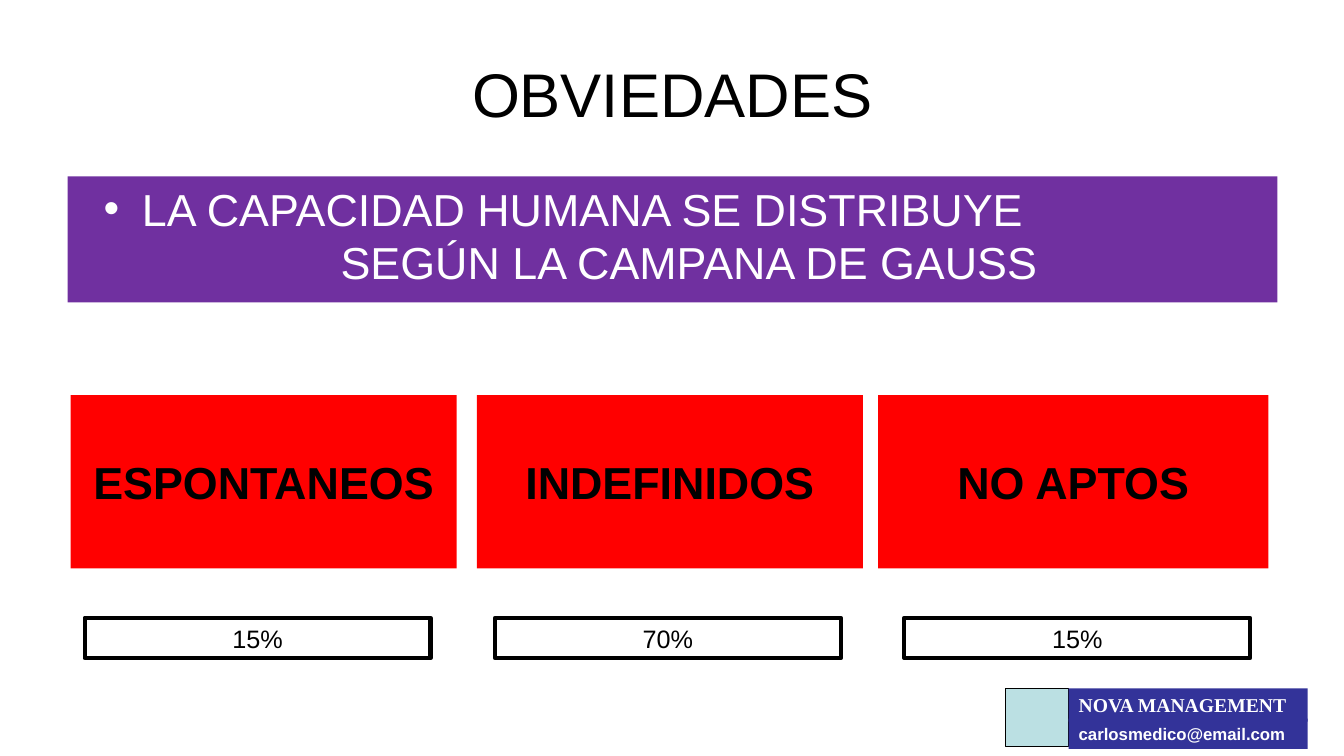
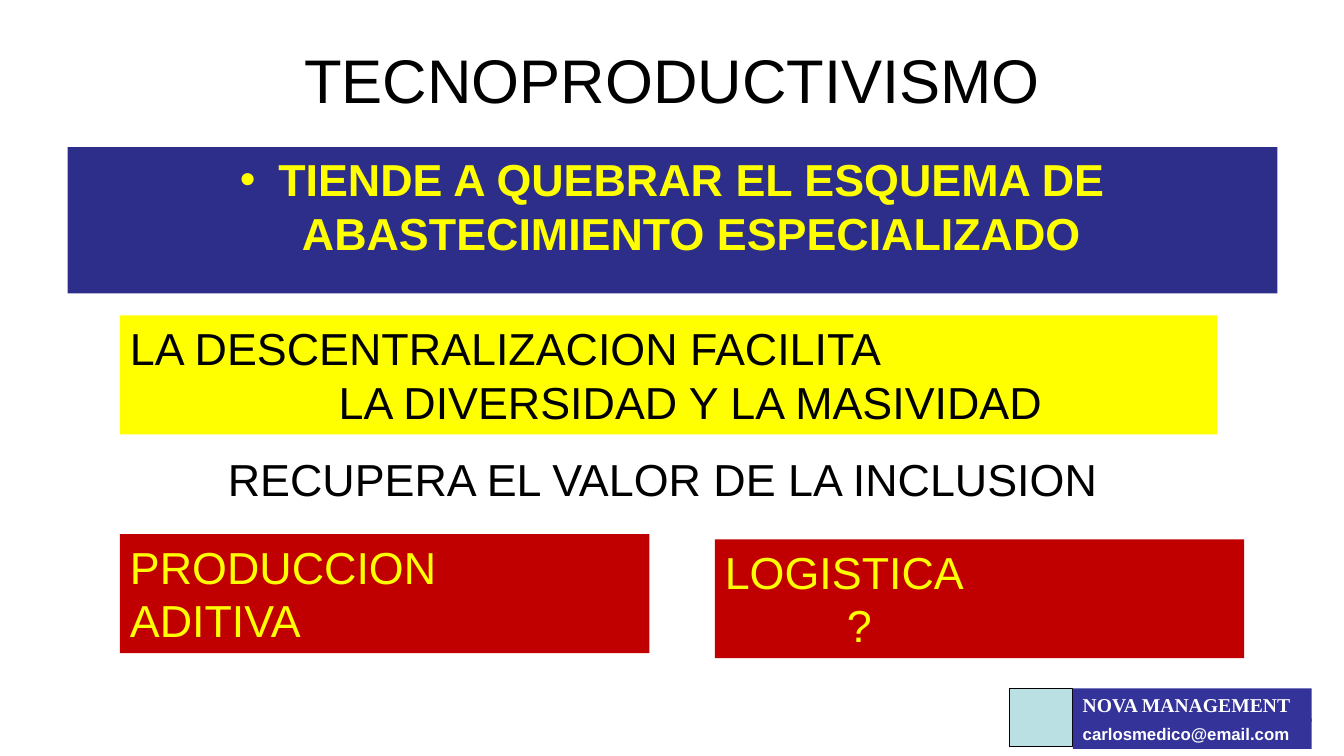
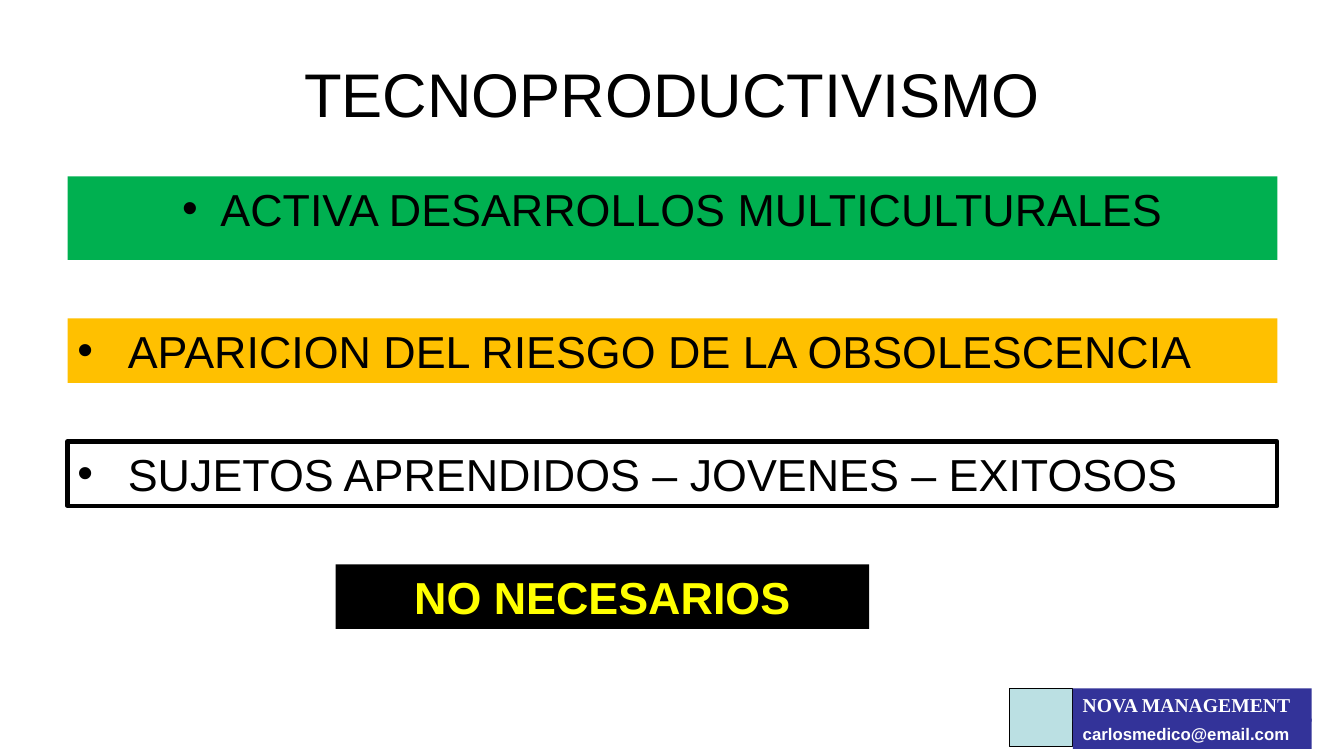
from lxml.etree import SubElement
from pptx import Presentation
from pptx.dml.color import RGBColor
from pptx.enum.shapes import MSO_SHAPE
from pptx.enum.text import MSO_ANCHOR, MSO_AUTO_SIZE, PP_ALIGN
from pptx.oxml.ns import qn
from pptx.util import Inches, Pt

BLACK = RGBColor(0x00, 0x00, 0x00)
WHITE = RGBColor(0xFF, 0xFF, 0xFF)
PURPLE = RGBColor(0x70, 0x30, 0xA0)
RED = RGBColor(0xFF, 0x00, 0x00)
NAVY = RGBColor(0x2D, 0x2D, 0x8A)
YELLOW = RGBColor(0xFF, 0xFF, 0x00)
WINE = RGBColor(0xC0, 0x00, 0x00)
GREEN = RGBColor(0x00, 0xB0, 0x50)
AMBER = RGBColor(0xFF, 0xC0, 0x00)
INDIGO = RGBColor(0x33, 0x33, 0x99)
AQUA = RGBColor(0xBB, 0xE0, 0xE3)

LEFT = 0.67
WIDE = 12
CENTER = PP_ALIGN.CENTER


def style(para, color, size, bold=False, face="Arial"):
    font = para.font
    font.name, font.size, font.bold = face, Pt(size), bold
    font.color.rgb = color


def indent(para, left, hang=0):
    props = para._p.get_or_add_pPr()
    props.set("marL", str(Inches(left)))
    props.set("indent", str(-Inches(hang)))
    if hang:
        SubElement(props, qn("a:buFont"), typeface="Arial")
        SubElement(props, qn("a:buChar"), char="•")


def panel(shapes, box, fill=None, edge=0):
    shape = shapes.add_shape(MSO_SHAPE.RECTANGLE, *map(Inches, box))
    shape.shadow.inherit = False
    if fill is None:
        shape.fill.background()
    else:
        shape.fill.solid()
        shape.fill.fore_color.rgb = fill
    if edge:
        shape.line.color.rgb = BLACK
        shape.line.width = Pt(edge)
    else:
        shape.line.fill.background()
    return shape


def write(shape, lines, color=BLACK, size=32, align=PP_ALIGN.LEFT,
          bold=False, face="Arial", anchor=MSO_ANCHOR.TOP):
    frame = shape.text_frame
    frame.word_wrap = True
    frame.auto_size = MSO_AUTO_SIZE.NONE
    frame.vertical_anchor = anchor
    frame.text = "\n".join(lines)
    for para in frame.paragraphs:
        para.alignment = align
        style(para, color, size, bold, face)
    return frame.paragraphs


def footer(slide, left, top=6.83):
    shapes = slide.shapes.add_group_shape().shapes
    panel(shapes, (left, top, 0.63, 0.58), AQUA, 0.75)
    rows = (
        (0, 0.33, "NOVA MANAGEMENT", 14, "Times New Roman"),
        (0.3, 0.3, "carlosmedico@email.com", 12, "Arial"),
    )
    for drop, high, text, size, face in rows:
        label = panel(shapes, (left + 0.63, top + drop, 2.37, high), INDIGO)
        write(label, [text], WHITE, size, bold=True, face=face)


def start(deck, text, high=1.25, mark=10.01):
    slide = deck.slides.add_slide(deck.slide_layouts[5])
    title = slide.shapes.title
    title.left, title.top, title.width, title.height = map(
        Inches, (LEFT, 0.3, WIDE, high))
    write(title, [text], size=44, align=CENTER, anchor=MSO_ANCHOR.MIDDLE)
    footer(slide, mark)
    return slide.shapes


def column(shapes, left, wide, name, share, inset):
    card = panel(shapes, (left, 3.92, wide, 1.72), RED)
    write(card, [name], align=CENTER, bold=True, anchor=MSO_ANCHOR.MIDDLE)
    rate = panel(shapes, (left + inset, 6.13, 3.43, 0.4), edge=3)
    write(rate, [share], size=18, align=CENTER, anchor=MSO_ANCHOR.MIDDLE)


def truths(deck):
    shapes = start(deck, "OBVIEDADES", mark=9.97)
    band = panel(shapes, (LEFT, 1.75, WIDE, 1.25), PURPLE)
    first, second = write(
        band,
        ["LA CAPACIDAD HUMANA SE DISTRIBUYE", "SEGÚN LA CAMPANA DE GAUSS"],
        WHITE)
    indent(first, 0.64, 0.38)
    indent(second, 2.61)
    for item in (
        (0.7, 3.83, "ESPONTANEOS", "15%", 0.14),
        (4.73, 3.83, "INDEFINIDOS", "70%", 0.18),
        (8.71, 3.87, "NO APTOS", "15%", 0.26),
    ):
        column(shapes, *item)


def supply(deck):
    shapes = start(deck, "TECNOPRODUCTIVISMO", 0.96)
    band = panel(shapes, (LEFT, 1.46, WIDE, 1.45), NAVY)
    lead, = write(
        band,
        ["TIENDE A QUEBRAR EL ESQUEMA DE ABASTECIMIENTO ESPECIALIZADO"],
        YELLOW, align=CENTER, bold=True)
    indent(lead, 0.38, 0.38)
    spread = panel(shapes, (1.19, 3.13, 10.88, 1.18), YELLOW)
    lines = write(spread, ["LA DESCENTRALIZACION FACILITA",
                           "LA DIVERSIDAD Y LA MASIVIDAD"])
    indent(lines[1], 2.07)
    value = shapes.add_textbox(*map(Inches, (1.19, 4.43, 10.77, 0.64)))
    write(value, ["RECUPERA EL VALOR DE LA INCLUSION"], align=CENTER)
    for left, top, words, shift in (
        (1.19, 5.3, ["PRODUCCION", "ADITIVA"], 0),
        (7.09, 5.35, ["LOGISTICA", "?"], 1.21),
    ):
        card = panel(shapes, (left, top, 5.25, 1.18), WINE)
        indent(write(card, words, YELLOW)[1], shift)


def risks(deck):
    shapes = start(deck, "TECNOPRODUCTIVISMO")
    for top, high, fill, edge, text, align, hang in (
        (1.75, 0.83, GREEN, 0, "ACTIVA DESARROLLOS MULTICULTURALES",
         CENTER, 0.38),
        (3.16, 0.64, AMBER, 0, "APARICION DEL RIESGO DE LA OBSOLESCENCIA",
         PP_ALIGN.LEFT, 0.5),
        (4.38, 0.64, None, 3, "SUJETOS APRENDIDOS – JOVENES – EXITOSOS",
         PP_ALIGN.LEFT, 0.5),
    ):
        band = panel(shapes, (LEFT, top, WIDE, high), fill, edge)
        para, = write(band, [text], align=align)
        indent(para, hang, hang)
    close = panel(shapes, (3.33, 5.6, 5.29, 0.64), BLACK)
    write(close, ["NO NECESARIOS"], YELLOW, align=CENTER, bold=True)


def main():
    deck = Presentation()
    deck.slide_width, deck.slide_height = Inches(13.33), Inches(7.5)
    for build in (truths, supply, risks):
        build(deck)
    deck.save("out.pptx")


if __name__ == "__main__":
    main()
